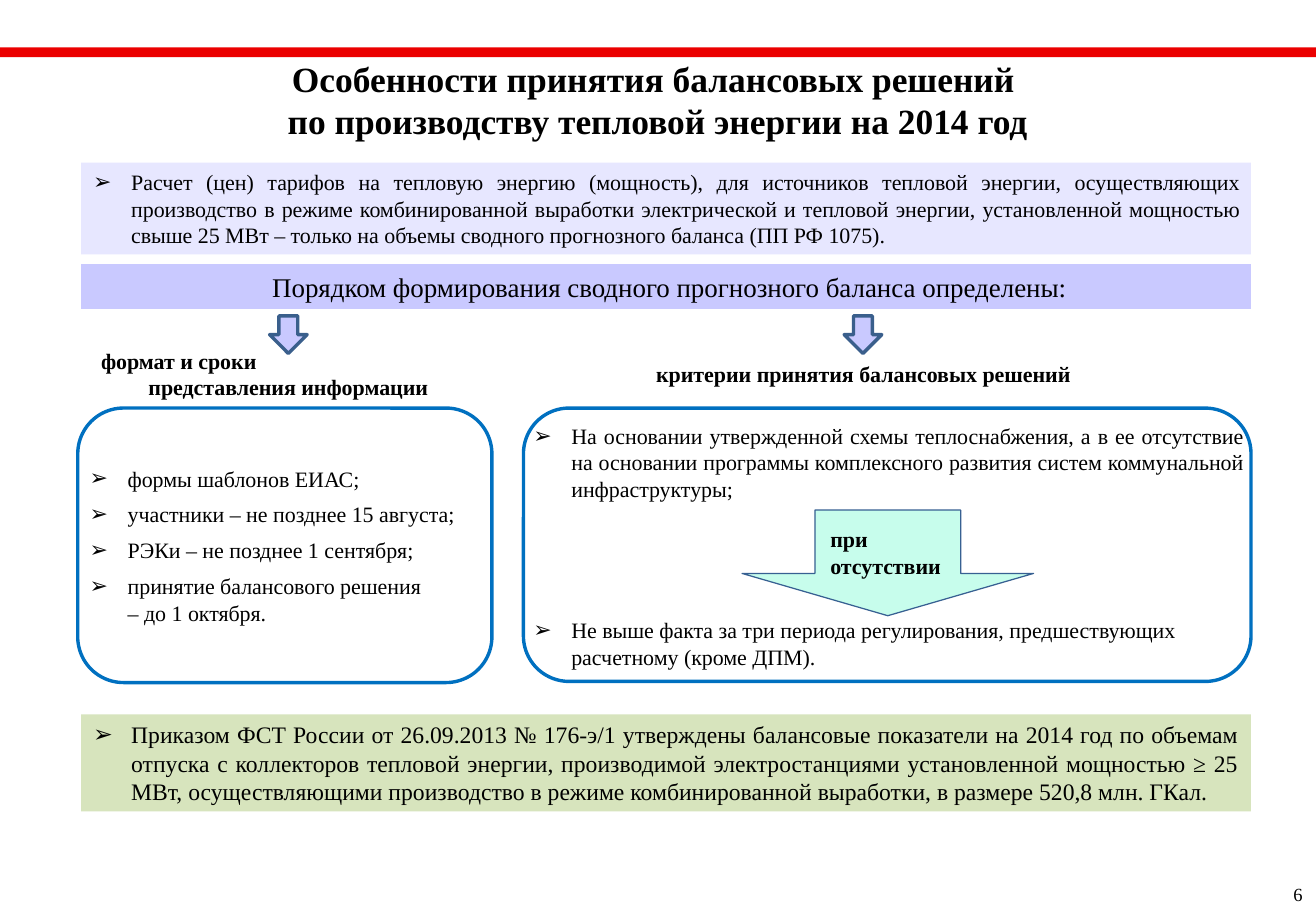
import copy
import pptx
import pptx.util
import pptx.dml.color
import pptx.enum.shapes
import pptx.enum.text
from pptx.oxml.ns import qn
from lxml import etree

Pt = pptx.util.Pt
Kind = pptx.enum.shapes.MSO_SHAPE
Align = pptx.enum.text.PP_ALIGN
Anchor = pptx.enum.text.MSO_ANCHOR


class Theme:
    font = "Times New Roman"
    ink, red, white = "000000", "EB0000", "FFFFFF"
    pale, lilac, green, mint = "E7E7FF", "C9C9FF", "D7E4BD", "C7FDEC"
    blue, navy, steel = "0070C0", "3A5F8C", "376092"
    title, lead, order, body, page = 21, 16, 14, 13, 11


def write(shape, text, size, align=Align.LEFT, anchor=Anchor.TOP, bold=False,
          inset=(7.2, 3.6), hang=None, gap=0, bullet=False):
    """Fill a shape with text; hang is (left margin, first-line indent)."""
    frame = shape.text_frame
    frame.text = text
    frame.word_wrap = True
    frame.auto_size = pptx.enum.text.MSO_AUTO_SIZE.NONE
    frame.vertical_anchor = anchor
    frame.margin_left = frame.margin_right = Pt(inset[0])
    frame.margin_top = frame.margin_bottom = Pt(inset[1])
    for i, para in enumerate(frame.paragraphs):
        para.alignment = align
        para.space_before = Pt(gap if i else 0)
        props = para._p.get_or_add_pPr()
        if hang:
            props.set("marL", str(Pt(hang[0])))
            props.set("indent", str(Pt(hang[1])))
        if bullet:
            etree.SubElement(props, qn("a:buFont")).set("typeface", "Arial")
            etree.SubElement(props, qn("a:buChar")).set("char", "➢")
        for run in para.runs:
            run.font.name = Theme.font
            run.font.size = Pt(size)
            run.font.bold = bold
            run.font.color.rgb = pptx.dml.color.RGBColor.from_string(Theme.ink)
        # Line breaks take the type size of the text around them
        for brk in para._p.findall(qn("a:br")):
            brk.append(copy.deepcopy(para.runs[0]._r.rPr))


def draw(kind, box, fill, line=None, width=2):
    shape = slide.shapes.add_shape(kind, *map(Pt, box))
    shape.shadow.inherit = False
    shape.fill.solid()
    shape.fill.fore_color.rgb = pptx.dml.color.RGBColor.from_string(fill)
    if line:
        shape.line.color.rgb = pptx.dml.color.RGBColor.from_string(line)
        shape.line.width = Pt(width)
    else:
        shape.line.fill.background()
    return shape


deck = pptx.Presentation()
deck.slide_width, deck.slide_height = Pt(780.12), Pt(540)
slide = deck.slides.add_slide(deck.slide_layouts[4])
holders = {h.placeholder_format.idx: h for h in slide.placeholders}
places = {
    0: (110.2, 30.2, 559.4, 57.6),
    1: (48.2, 200.9, 245.5, 41),
    2: (48.2, 241.9, 243.4, 162.7),
    3: (311.2, 200.9, 401, 41),
    4: (311.2, 245.5, 430.6, 56.9),
}
for key, box in places.items():
    item = holders[key]
    item.left, item.top, item.width, item.height = map(Pt, box)

# Frames stand behind the lists
for box in [(46.1, 241.9, 245.5, 162.7), (310.3, 241.9, 431.3, 162)]:
    card = draw(Kind.ROUNDED_RECTANGLE, box, Theme.white, Theme.blue)
    card.element.getparent().insert(2, card.element)

draw(Kind.RECTANGLE, (0, 28.1, 780.12, 5.8), Theme.red)
write(holders[0],
      "Особенности принятия балансовых решений \vпо производству тепловой энергии на 2014 год",
      Theme.title, Align.CENTER, bold=True)

# Full-width bands
dots = dict(hang=(22.5, -22.5), bullet=True)
bands = [
    (96.5, 54.3, Theme.pale, Theme.body, Align.JUSTIFY, dots,
     "Расчет (цен) тарифов на тепловую энергию (мощность), для источников тепловой энергии, "
     "осуществляющих производство в режиме комбинированной выработки электрической и тепловой "
     "энергии, установленной мощностью свыше 25 МВт – только на объемы сводного прогнозного "
     "баланса (ПП РФ 1075)."),
    (156.6, 26.6, Theme.lilac, Theme.lead, Align.CENTER, dict(hang=(4, 0)),
     "Порядком формирования сводного прогнозного баланса определены:"),
    (423.4, 57.6, Theme.green, Theme.order, Align.JUSTIFY, dots,
     "Приказом ФСТ России от 26.09.2013 № 176-э/1 утверждены балансовые показатели на 2014 год "
     "по объемам отпуска с коллекторов тепловой энергии, производимой электростанциями "
     "установленной мощностью ≥ 25 МВт, осуществляющими производство в режиме комбинированной "
     "выработки, в размере 520,8 млн. ГКал."),
]
for top, high, fill, size, align, marks, text in bands:
    band = draw(Kind.RECTANGLE, (48.2, top, 693.4, high), fill)
    write(band, text, size, align, **marks)

# Two columns: heads and lists
snug = dict(anchor=Anchor.MIDDLE, inset=(5, 2.9))
write(holders[1], "формат и сроки\vпредставления информации", Theme.body,
      bold=True, hang=(34.8, -28.1), **snug)
write(holders[3], "критерии принятия балансовых решений", Theme.body,
      Align.CENTER, bold=True, **snug)
write(holders[2],
      "формы шаблонов ЕИАС;\nучастники – не позднее 15 августа;\n"
      "РЭКи – не позднее 1 сентября;\nпринятие балансового решения \v– до 1 октября.",
      Theme.body, gap=5.7, **snug, **dots)
write(holders[4],
      "На основании утвержденной схемы теплоснабжения, а в ее отсутствие на основании программы "
      "комплексного развития систем коммунальной инфраструктуры;",
      Theme.body, Align.JUSTIFY, **snug, **dots)
limit = slide.shapes.add_textbox(*map(Pt, (311.2, 357.8, 430.6, 46.8)))
write(limit,
      "Не выше факта за три периода регулирования, предшествующих расчетному (кроме ДПМ).",
      Theme.body, **snug, **dots)

# Arrows
lack = draw(Kind.DOWN_ARROW, (439.9, 302.4, 172.8, 62.6), Theme.mint, Theme.steel, 0.75)
lack.adjustments[0], lack.adjustments[1] = 0.5, 0.4
write(lack, "при\vотсутствии", Theme.body, anchor=Anchor.MIDDLE, bold=True, hang=(2, 0))
for left in (159.8, 500.4):
    draw(Kind.DOWN_ARROW, (left, 187.2, 22.3, 22.3), Theme.lilac, Theme.navy)

page = slide.shapes.add_textbox(*map(Pt, (759.6, 519.8, 20.2, 20.2)))
write(page, "6", Theme.page)
page.text_frame.word_wrap = False

deck.save("out.pptx")
